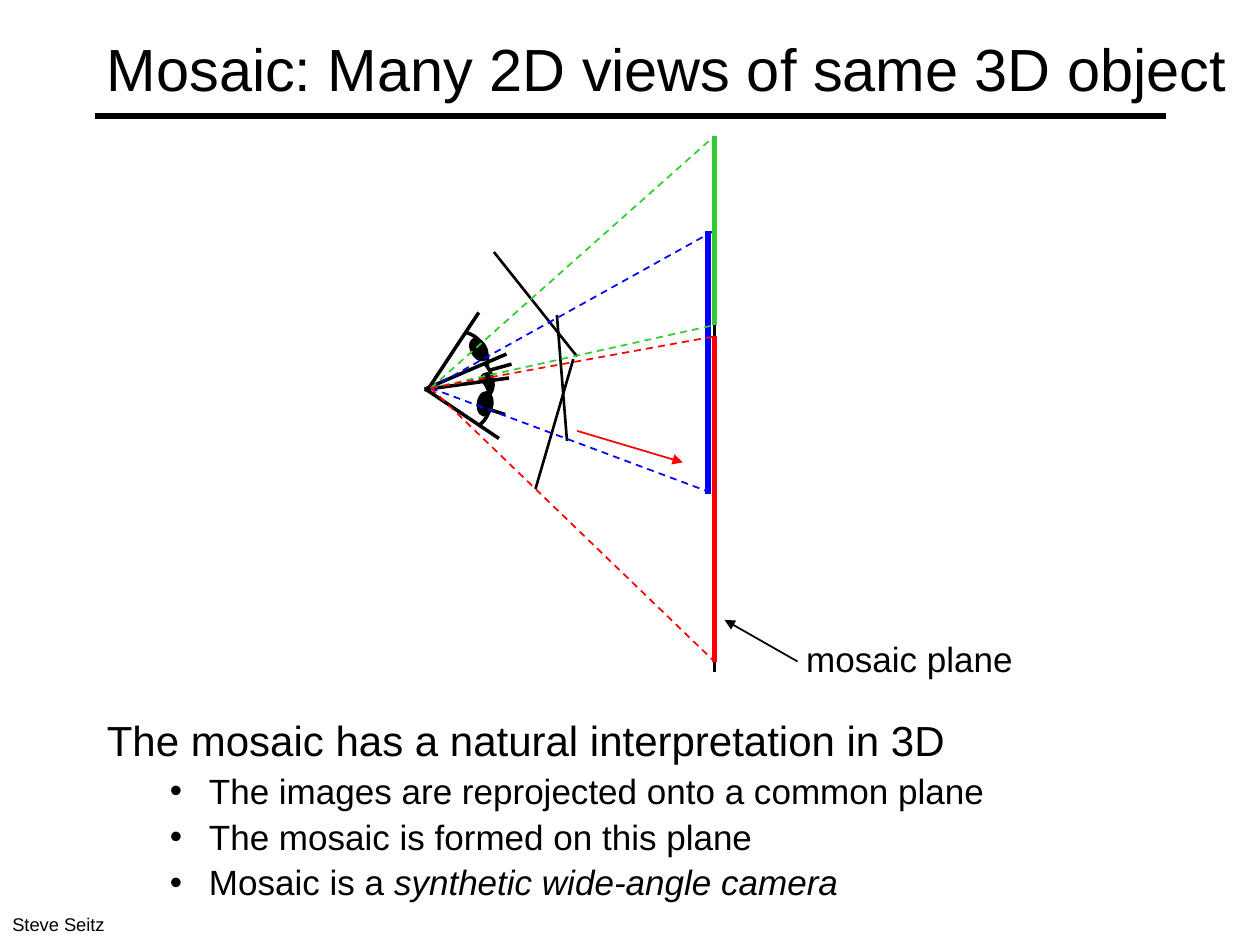
from lxml import etree
from pptx import Presentation
from pptx import util as u
from pptx.dml.color import RGBColor
from pptx.enum import dml, shapes, text
from pptx.oxml.ns import qn

BLACK, WHITE, RED, GREEN, BLUE = "000000", "FFFFFF", "FF0000", "33CC33", "0000FF"
EYE = (3.42, 3.08)
PLANE_X = 5.67


def rgb(value):
    return RGBColor.from_string(value)


def line(start, end, color=BLACK, width=1.5, dash=False, arrow=False):
    """Draw a straight line between two points in inches."""
    c = s.shapes.add_connector(shapes.MSO_CONNECTOR.STRAIGHT,
                               *[u.Inches(v) for v in (*start, *end)])
    c.line.color.rgb = rgb(color)
    c.line.width = u.Pt(width)
    if dash:
        c.line.dash_style = dml.MSO_LINE.DASH
    if arrow:
        etree.SubElement(c.line._get_or_add_ln(), qn("a:tailEnd"), type="triangle")
    etree.SubElement(c._element.spPr, qn("a:effectLst"))


prs = Presentation()
prs.slide_width, prs.slide_height = u.Inches(10), u.Inches(7.5)
s = prs.slides.add_slide(prs.slide_layouts[6])

line((0.75, 0.92), (9.25, 0.92), width=3)
line((PLANE_X, 1.08), (PLANE_X, 5.33))
line((6.33, 5.25), (5.75, 4.92), width=1, arrow=True)

# Three eye positions: white wedge, curved cornea, lids, pupil and image plane
eyes = [
    {"corner": (3.64, 2.89), "arc": [(3.7, 2.64), (3.82, 2.67), (3.9, 2.81), (3.86, 2.94)],
     "lids": [((3.8, 2.48), (3.41, 3.07)), ((3.41, 3.07), (4.06, 2.89))],
     "pupil": (3.74, 2.68), "turn": 330.3, "view": ((3.92, 2), (4.58, 2.83))},
    {"corner": (3.37, 3.09), "arc": [(3.85, 2.89), (3.94, 2.98), (3.92, 3.13), (3.82, 3.23)],
     "lids": [((4.02, 2.81), (3.37, 3.09)), ((3.37, 3.09), (4.01, 3.29))],
     "pupil": (3.8, 2.96), "turn": 3.4, "view": ((4.42, 2.5), (4.5, 3.5))},
    {"corner": (3.38, 3.09), "arc": [(3.81, 3.37), (3.91, 3.29), (3.92, 3.14), (3.84, 3.03)],
     "lids": [((3.96, 3.48), (3.38, 3.09)), ((3.38, 3.09), (4.04, 3))],
     "pupil": (3.79, 3.11), "turn": 7.2, "view": ((4.25, 3.88), (4.55, 2.85))},
]
STEPS = 16
for eye in eyes:
    line(*eye["view"])
    curve = []
    for t in [i / STEPS for i in range(STEPS + 1)]:
        weights = ((1 - t) ** 3, 3 * t * (1 - t) ** 2, 3 * t * t * (1 - t), t ** 3)
        curve.append([u.Inches(sum(w * p[axis] for w, p in zip(weights, eye["arc"])))
                      for axis in (0, 1)])
    corner = [u.Inches(v) for v in eye["corner"]]
    for points, closed in (([corner] + curve, True), (curve, False)):
        fb = s.shapes.build_freeform(*points[0], scale=1.0)
        fb.add_line_segments(points[1:], close=closed)
        sp = fb.convert_to_shape()
        sp.shadow.inherit = False
        if closed:
            sp.fill.solid()
            sp.fill.fore_color.rgb = rgb(WHITE)
            sp.line.fill.background()
        else:
            sp.fill.background()
            sp.line.color.rgb = rgb(BLACK)
            sp.line.width = u.Pt(2)
    for lid in eye["lids"]:
        line(*lid, width=2)
    sp = s.shapes.add_shape(shapes.MSO_SHAPE.OVAL, *[u.Inches(v) for v in (*eye["pupil"], 0.12, 0.19)])
    sp.rotation = eye["turn"]
    sp.shadow.inherit = False
    sp.fill.solid()
    sp.fill.fore_color.rgb = rgb(BLACK)
    sp.line.color.rgb = rgb(BLACK)
    sp.line.width = u.Pt(1)

# Each view: two dashed rays and the strip they cover on the mosaic plane
for color, top, bottom, strip_x in [(BLUE, 1.83, 3.92, 5.62), (GREEN, 1.08, 2.58, PLANE_X),
                                    (RED, 2.67, 5.25, PLANE_X)]:
    for y in (top, bottom):
        line(EYE, (PLANE_X, y), color, 1, dash=True)
    line((strip_x, top), (strip_x, bottom), color, 3)
line((4.58, 3.42), (5.42, 3.67), RED, 1, arrow=True)

# Text: box, wrap, anchor, then paragraphs of (size, bullet, runs)
MIDDLE, TOP = text.MSO_ANCHOR.MIDDLE, text.MSO_ANCHOR.TOP
boxes = [
    ((0.75, 0.08, 9.25, 0.92), True, MIDDLE,
     [(34, None, ["Mosaic: Many 2D views of same 3D object"])]),
    ((6.3, 5.01, 1.93, 0.44), False, TOP, [(20, None, ["mosaic plane"])]),
    ((0.75, 5.67, 8.5, 1.67), True, TOP,
     [(24, False, ["The mosaic has a natural interpretation in 3D"]),
      (20, True, ["The images are reprojected onto a common plane"]),
      (20, True, ["The mosaic is formed on this plane"]),
      (20, True, ["Mosaic is a ", "synthetic wide-angle camera"])]),
    ((0, 7.2, 2.8, 0.29), True, TOP, [(10.5, None, ["Steve Seitz"])]),
]
for box, wrap, anchor, paragraphs in boxes:
    tf = s.shapes.add_textbox(*[u.Inches(v) for v in box]).text_frame
    tf.word_wrap, tf.vertical_anchor = wrap, anchor
    for i, (size, bullet, runs) in enumerate(paragraphs):
        p = tf.add_paragraph() if i else tf.paragraphs[0]
        if bullet is not None:
            p.line_spacing = 0.9
            p.space_before = u.Pt(size * 0.23)
        if bullet:
            p.level = 1
            pPr = p._p.get_or_add_pPr()
            pPr.set("marL", str(u.Inches(0.81)))
            pPr.set("indent", str(u.Inches(-0.31)))
            etree.SubElement(pPr, qn("a:buFont"), typeface="Arial")
            etree.SubElement(pPr, qn("a:buChar"), char="•")
        for j, words in enumerate(runs):
            r = p.add_run()
            r.text = words
            for name, value in {"name": "Arial", "size": u.Pt(size), "italic": j > 0}.items():
                setattr(r.font, name, value)
            r.font.color.rgb = rgb(BLACK)

prs.save("out.pptx")
